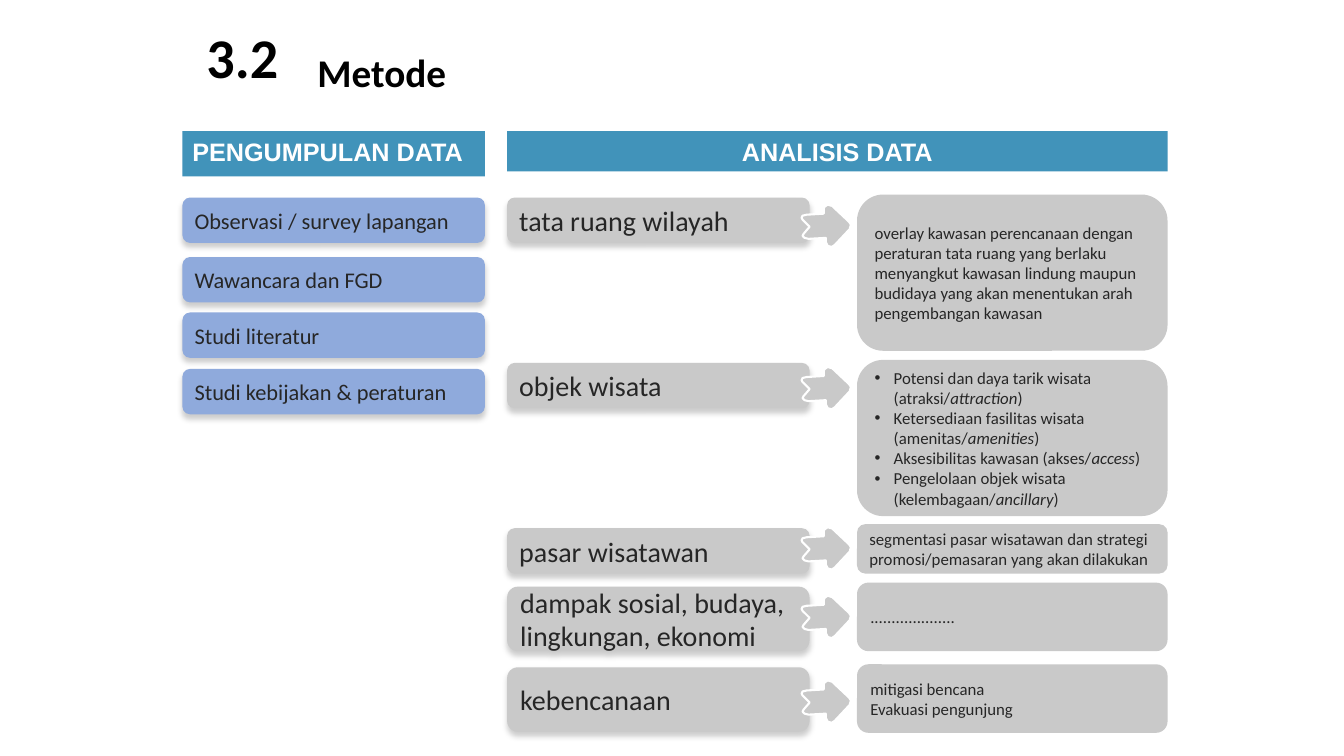
from pptx import Presentation
from pptx.dml.color import RGBColor
from pptx.enum.shapes import MSO_SHAPE
from pptx.enum.text import MSO_ANCHOR, MSO_AUTO_SIZE, PP_ALIGN
from pptx.oxml import parse_xml
from pptx.oxml.ns import nsdecls, qn
from pptx.util import Inches, Pt

RECT = MSO_SHAPE.RECTANGLE
ROUNDED = MSO_SHAPE.ROUNDED_RECTANGLE
TOP, MIDDLE = MSO_ANCHOR.TOP, MSO_ANCHOR.MIDDLE
LEFT, CENTER = PP_ALIGN.LEFT, PP_ALIGN.CENTER
FIT_SHAPE = MSO_AUTO_SIZE.SHAPE_TO_FIT_TEXT

TEAL, BLUE, GREY = "4193BA", "8FAADC", "C9C9C9"
INK, BLACK, WHITE = "262626", "000000", "FFFFFF"

COLLECT_LEFT, ANALYSIS_LEFT, DETAIL_LEFT = 1.81, 5.03, 8.5
COLUMN_WIDTH, DETAIL_WIDTH, ROW_HEIGHT = 3, 3.08, 0.45
ARROW_LEFT = 7.94

ARROW_OUTLINE = [
    (0.27, 0), (0.3, 0.01), (0.31, 0.01), (0.48, 0.17), (0.5, 0.2),
    (0.49, 0.23), (0.49, 0.24), (0.34, 0.4), (0.31, 0.42), (0.27, 0.41),
    (0.25, 0.37), (0.25, 0.33), (0.08, 0.34), (0.04, 0.33), (0.02, 0.31),
    (0.03, 0.29), (0.09, 0.22), (0.02, 0.15), (0.01, 0.13), (0.02, 0.11),
    (0.06, 0.1), (0.23, 0.09), (0.23, 0.04), (0.24, 0.02),
]

COLLECTION = [
    (1.96, "Observasi / survey lapangan"),
    (2.55, "Wawancara dan FGD"),
    (3.1, "Studi literatur"),
    (3.66, "Studi kebijakan & peraturan"),
]

ANALYSIS = [
    ("tata ruang wilayah", 1.96, ROW_HEIGHT, 2.03, 1.93, 1.55, [
        "overlay kawasan perencanaan dengan peraturan tata ruang yang berlaku "
        "menyangkut kawasan lindung maupun budidaya yang akan menentukan arah "
        "pengembangan kawasan"]),
    ("objek wisata", 3.6, ROW_HEIGHT, 3.64, 3.57, 1.55, [
        "• Potensi dan daya tarik wisata (atraksi/*attraction*)",
        "• Ketersediaan fasilitas wisata (amenitas/*amenities*)",
        "• Aksesibilitas kawasan (akses/*access*)",
        "• Pengelolaan objek wisata (kelembagaan/*ancillary*)"]),
    ("pasar wisatawan", 5.24, ROW_HEIGHT, 5.23, 5.2, 0.49, [
        "segmentasi pasar wisatawan dan strategi promosi/pemasaran yang akan dilakukan"]),
    ("dampak sosial, budaya, lingkungan, ekonomi", 5.82, 0.64, 5.91, 5.78, 0.68, [
        "...................."]),
    ("kebencanaan", 6.62, 0.64, 6.75, 6.59, 0.68, [
        "mitigasi bencana", "Evakuasi pengunjung"]),
]


def rgb(value):
    return RGBColor.from_string(value)


class MethodSlide:
    font = "Calibri"

    def __init__(self, presentation):
        self.shapes = presentation.slides.add_slide(presentation.slide_layouts[6]).shapes

    def fill_text(self, frame, lines, size, color, font=font, bold=False, align=LEFT):
        for index, line in enumerate(lines):
            paragraph = frame.paragraphs[0] if index == 0 else frame.add_paragraph()
            paragraph.alignment = align
            if line.startswith("• "):
                line = line[2:]
                self.bullet(paragraph)
            for position, part in enumerate(line.split("*")):
                run = paragraph.add_run()
                run.text = part
                run.font.name = font
                run.font.size = Pt(size)
                run.font.bold = bold
                run.font.italic = position % 2 == 1
                run.font.color.rgb = rgb(color)

    def bullet(self, paragraph):
        properties = paragraph._p.get_or_add_pPr()
        properties.set("marL", str(Inches(0.19)))
        properties.set("indent", str(Inches(-0.19)))
        properties.append(parse_xml(f'<a:buFont {nsdecls("a")} typeface="Arial"/>'))
        properties.append(parse_xml(f'<a:buChar {nsdecls("a")} char="•"/>'))

    def title(self, text, left, top, width, height, size):
        box = self.shapes.add_textbox(Inches(left), Inches(top), Inches(width), Inches(height))
        box.text_frame.word_wrap = False
        box.text_frame.auto_size = FIT_SHAPE
        self.fill_text(box.text_frame, [text], size, BLACK, bold=True)

    def block(self, kind, left, top, width, height, fill, anchor):
        block = self.shapes.add_shape(
            kind, Inches(left), Inches(top), Inches(width), Inches(height))
        block.shadow.inherit = False
        block.fill.solid()
        block.fill.fore_color.rgb = rgb(fill)
        block.line.fill.background()
        block.text_frame.word_wrap = True
        block.text_frame.vertical_anchor = anchor
        return block

    def heading(self, text, left, width, height, align):
        block = self.block(RECT, left, 1.3, width, height, TEAL, TOP)
        self.fill_text(block.text_frame, [text], 18, WHITE, "Arial", True, align)

    def label(self, text, left, top, height, fill, size):
        block = self.block(ROUNDED, left, top, COLUMN_WIDTH, height, fill, MIDDLE)
        effects = block._element.spPr.find(qn("a:effectLst"))
        effects.append(parse_xml(
            f'<a:outerShdw {nsdecls("a")} blurRad="{Pt(4)}" dist="{Pt(3)}" dir="5400000" '
            f'rotWithShape="0"><a:srgbClr val="{BLACK}"><a:alpha val="20000"/></a:srgbClr>'
            '</a:outerShdw>'))
        self.fill_text(block.text_frame, [text], size, INK)

    def detail(self, lines, top, height):
        block = self.block(ROUNDED, DETAIL_LEFT, top, DETAIL_WIDTH, height, GREY, MIDDLE)
        self.fill_text(block.text_frame, lines, 12, INK)

    def arrow(self, top):
        points = [(Inches(ARROW_LEFT + x), Inches(top + y)) for x, y in ARROW_OUTLINE]
        builder = self.shapes.build_freeform(*points[0])
        builder.add_line_segments(points[1:], close=True)
        arrow = builder.convert_to_shape()
        arrow.shadow.inherit = False
        arrow.fill.solid()
        arrow.fill.fore_color.rgb = rgb(GREY)
        arrow.line.color.rgb = rgb(WHITE)
        arrow.line.width = Pt(1.5)


def main():
    presentation = Presentation()
    presentation.slide_width = Inches(13.33)
    presentation.slide_height = Inches(7.5)
    slide = MethodSlide(presentation)

    slide.heading("PENGUMPULAN DATA", COLLECT_LEFT, COLUMN_WIDTH, 0.45, LEFT)
    slide.heading("ANALISIS DATA", ANALYSIS_LEFT, 6.55, 0.4, CENTER)
    slide.title("Metode", 3.05, 0.43, 1.67, 0.57, 28)
    slide.title("3.2", 1.95, 0.17, 1.06, 0.77, 40)

    for topic, top, height, _, detail_top, detail_height, lines in ANALYSIS:
        slide.label(topic, ANALYSIS_LEFT, top, height, GREY, 20)
        slide.detail(lines, detail_top, detail_height)
    for top, technique in COLLECTION:
        slide.label(technique, COLLECT_LEFT, top, ROW_HEIGHT, BLUE, 16)
    for _, _, _, arrow_top, _, _, _ in ANALYSIS:
        slide.arrow(arrow_top)

    presentation.save("out.pptx")


if __name__ == "__main__":
    main()
